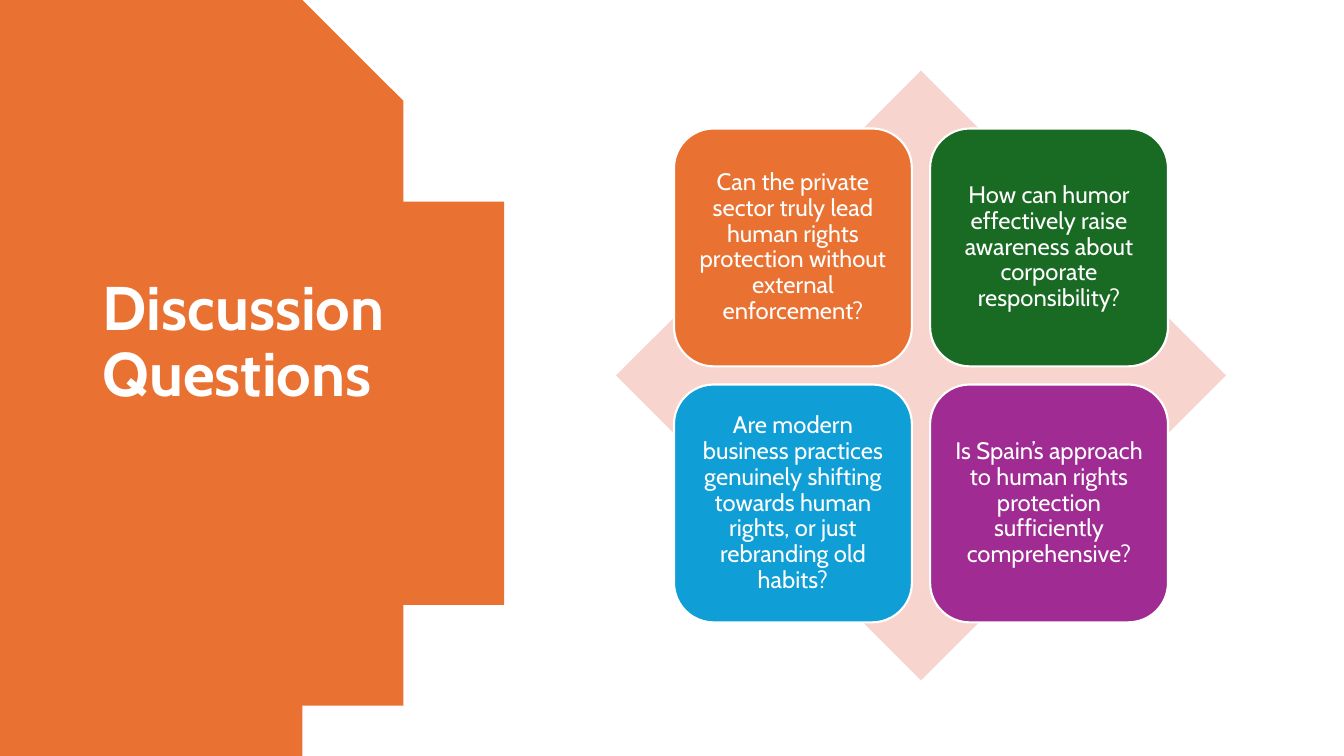
from math import asin, cos, sin

from pptx import Presentation
from pptx.dml.color import RGBColor
from pptx.enum.shapes import MSO_SHAPE
from pptx.enum.text import MSO_ANCHOR, PP_ALIGN
from pptx.util import Inches, Pt

# Content
TITLE = "Discussion Questions"
QUESTIONS = [
    ("Can the private sector truly lead human rights protection without external enforcement?", "E97132"),
    ("How can humor effectively raise awareness about corporate responsibility?", "196B24"),
    ("Are modern business practices genuinely shifting towards human rights, or just rebranding old habits?", "0F9ED5"),
    ("Is Spain’s approach to human rights protection sufficiently comprehensive?", "A02B93"),
]
FONT, WHITE, ORANGE, PINK = "Cabin", "FFFFFF", "E97132", "F7D5CE"

# Layout in inches
WIDTH, HEIGHT = 13.33, 7.5
ARC_CENTER, ARC_RADIUS, ARC_STEPS = 0.53, 4.4, 120
DIAMOND_LEFT, DIAMOND_TOP, DIAMOND_SIZE = 6.11, 0.7, 6.05
CARD, PITCH, COLUMNS = 2.36, 2.54, 2
CARD_OFFSET = (DIAMOND_SIZE - PITCH - CARD) / 2


def color(value):
    return RGBColor.from_string(value)


def paint(shape, fill, line=None):
    shape.shadow.inherit = False
    shape.fill.solid()
    shape.fill.fore_color.rgb = color(fill)
    if line:
        shape.line.color.rgb = color(line)
        shape.line.width = Pt(1.5)
    else:
        shape.line.fill.background()


def write(frame, text, size, align, bold=False):
    frame.word_wrap = True
    frame.vertical_anchor = MSO_ANCHOR.MIDDLE
    para = frame.paragraphs[0]
    para.alignment = align
    para.line_spacing = 0.9
    span = para.add_run()
    span.text = text
    span.font.name = FONT
    span.font.size = Pt(size)
    span.font.bold = bold
    span.font.color.rgb = color(WHITE)


deck = Presentation()
deck.slide_width, deck.slide_height = Inches(WIDTH), Inches(HEIGHT)
page = deck.slides.add_slide(deck.slide_layouts[6])

# Orange panel with a circular right edge
half_angle = asin(HEIGHT / 2 / ARC_RADIUS)
angles = [half_angle * (2 * step / ARC_STEPS - 1) for step in range(ARC_STEPS + 1)]
arc = [(ARC_CENTER + ARC_RADIUS * cos(angle), HEIGHT / 2 + ARC_RADIUS * sin(angle))
       for angle in angles]
outline = page.shapes.build_freeform(0, 0, scale=Inches(1))
outline.add_line_segments(arc + [(0, HEIGHT)], close=True)
paint(outline.convert_to_shape(), ORANGE)

# Title, lifted by one line above the middle
title = page.shapes.add_textbox(Inches(0.92), Inches(0.7), Inches(3.23), Inches(6.09))
title.text_frame.margin_bottom = Inches(0.72)
write(title.text_frame, TITLE, 44, PP_ALIGN.LEFT, bold=True)

# Diamond behind the cards
diamond = page.shapes.add_shape(
    MSO_SHAPE.DIAMOND, Inches(DIAMOND_LEFT), Inches(DIAMOND_TOP),
    Inches(DIAMOND_SIZE), Inches(DIAMOND_SIZE))
paint(diamond, PINK)

# Question cards in a two by two grid
for index, (question, fill) in enumerate(QUESTIONS):
    row, column = divmod(index, COLUMNS)
    card = page.shapes.add_shape(
        MSO_SHAPE.ROUNDED_RECTANGLE,
        Inches(DIAMOND_LEFT + CARD_OFFSET + column * PITCH),
        Inches(DIAMOND_TOP + CARD_OFFSET + row * PITCH),
        Inches(CARD), Inches(CARD))
    paint(card, fill, WHITE)
    frame = card.text_frame
    frame.margin_left = frame.margin_right = Inches(0.07)
    frame.margin_top = frame.margin_bottom = Inches(0.07)
    write(frame, question, 17, PP_ALIGN.CENTER)

deck.save("out.pptx")
